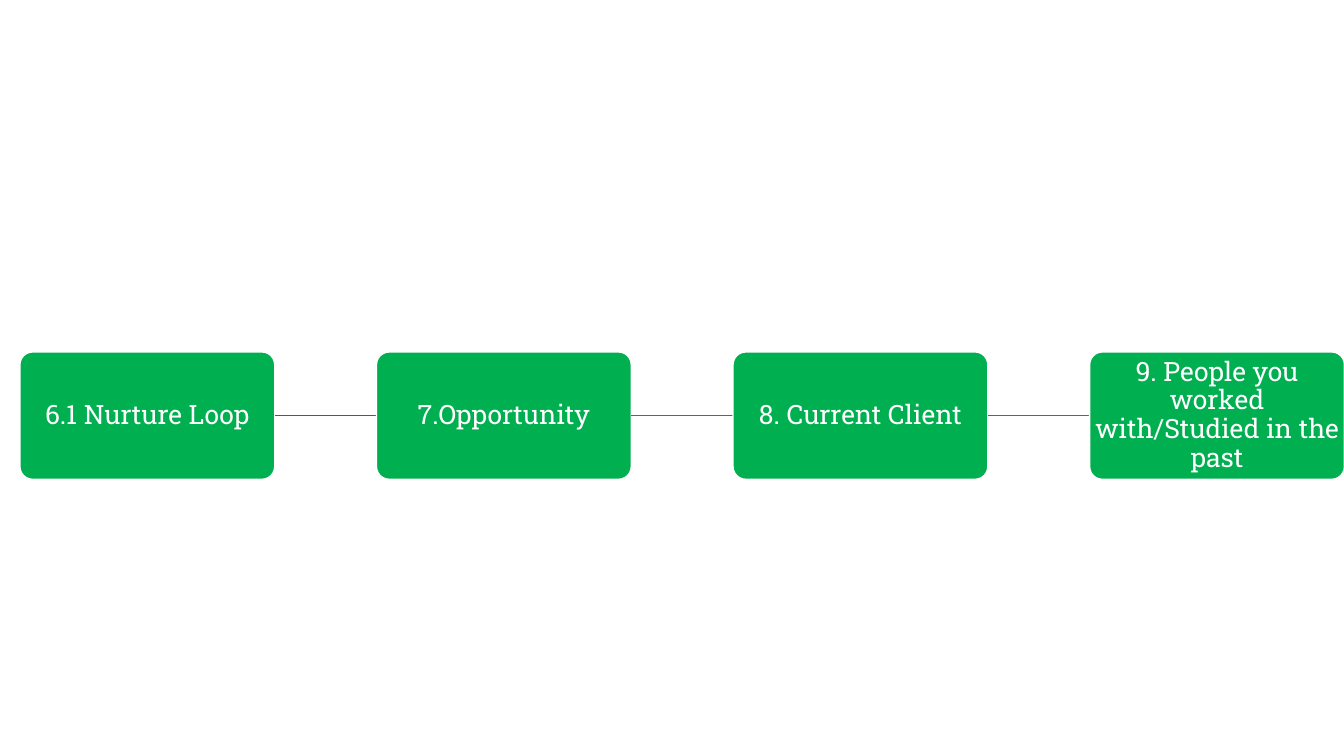
from lxml import etree
from pptx import Presentation
from pptx.dml.color import RGBColor
from pptx.enum import shapes, text
from pptx.oxml import ns
from pptx.util import Pt


def tint(code):
    return RGBColor.from_string(code)


def write(frame, words, size=19, color="FFFFFF", face="Roboto Slab"):
    frame.word_wrap = True
    frame.vertical_anchor = text.MSO_ANCHOR.MIDDLE
    frame.margin_left = frame.margin_right = Pt(0.95)
    frame.margin_top = frame.margin_bottom = Pt(0.95)
    para = frame.paragraphs[0]
    para.alignment = text.PP_ALIGN.CENTER
    para.line_spacing = 0.9
    run = para.add_run()
    run.text = words
    run.font.size = Pt(size)
    run.font.name = face
    run.font.color.rgb = tint(color)


deck = Presentation()
deck.slide_width, deck.slide_height = Pt(960), Pt(540)
slide = deck.slides.add_slide(deck.slide_layouts[6])

# Row of stages
stages = [
    "6.1 Nurture Loop",
    "7.Opportunity",
    "8. Current Client",
    "9. People you worked with/Studied in the past",
]
left, top, width, height, pitch = 14.2, 251.4, 182, 91, 254.7
middle = top + height / 2

for i, stage in enumerate(stages):
    x = left + i * pitch

    # Link from the stage before
    if i:
        link = slide.shapes.add_connector(
            shapes.MSO_CONNECTOR.STRAIGHT,
            Pt(x - pitch + width), Pt(middle), Pt(x), Pt(middle))
        link.line.color.rgb = tint("A93A12" if i == 1 else "BF4115")
        link.line.width = Pt(1)
        etree.SubElement(link.element.spPr, ns.qn("a:effectLst"))

    # Stage box
    box = slide.shapes.add_shape(
        shapes.MSO_SHAPE.ROUNDED_RECTANGLE,
        Pt(x), Pt(top), Pt(width), Pt(height))
    box.adjustments[0] = 0.1
    box.shadow.inherit = False
    box.fill.solid()
    box.fill.fore_color.rgb = tint("00B050")
    box.line.color.rgb = tint("FFFFFF")
    box.line.width = Pt(1)
    write(box.text_frame, stage)

deck.save("out.pptx")
